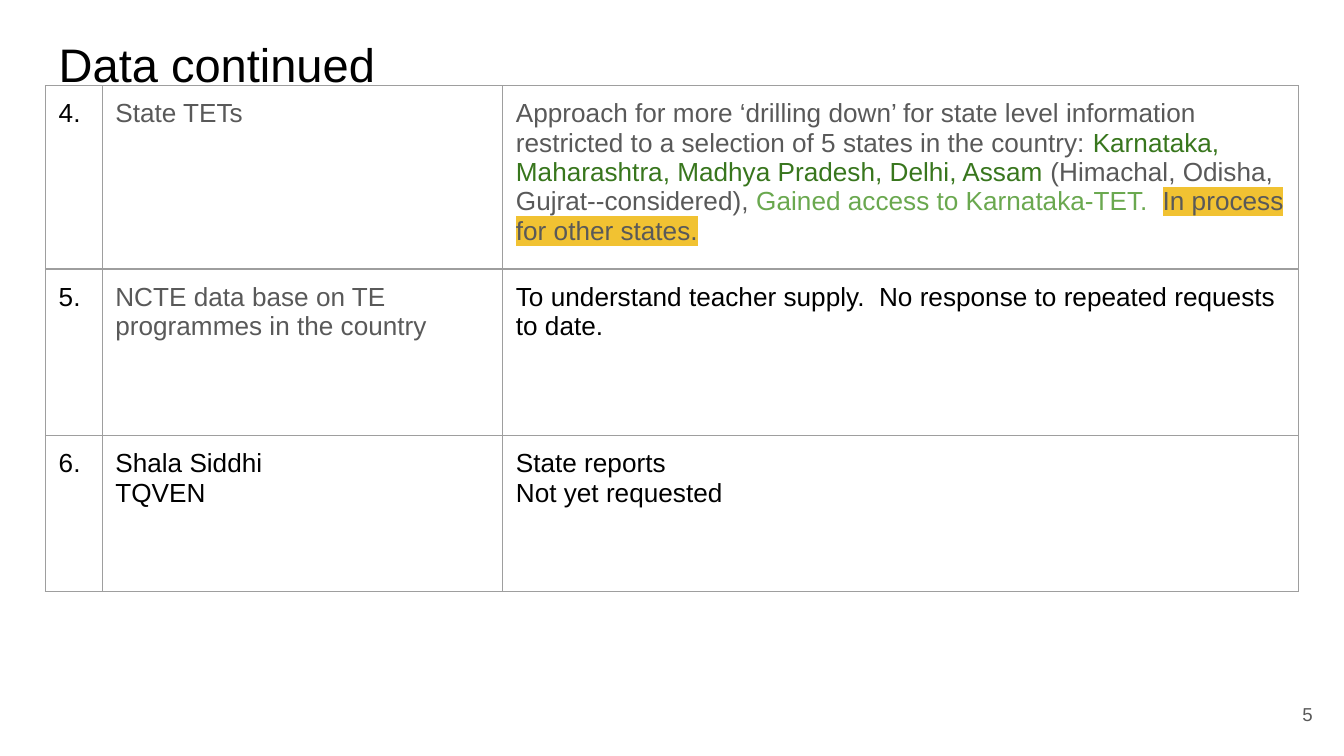
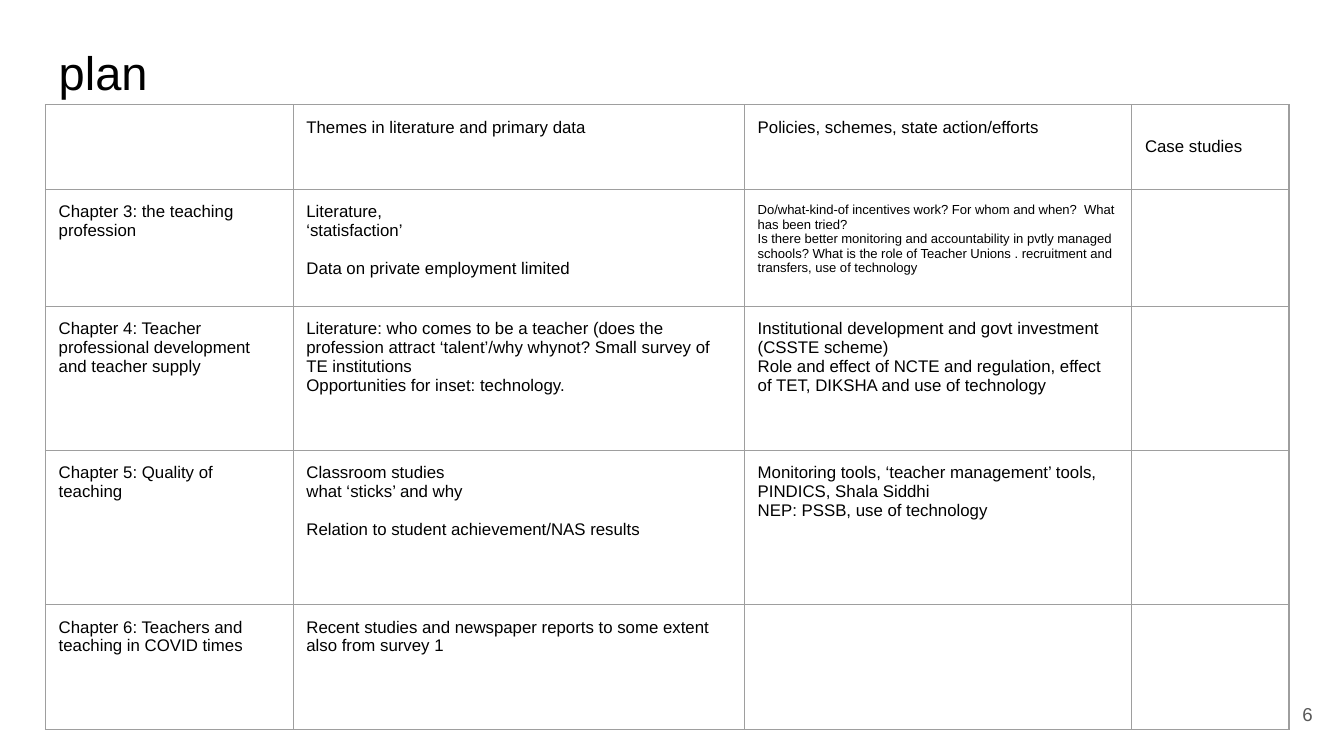
from lxml import etree
from pptx import Presentation
from pptx import util as u
from pptx.dml.color import RGBColor
from pptx.enum import text
from pptx.oxml import ns

FONT = "Arial"
BLACK = RGBColor(0x00, 0x00, 0x00)
GREY = RGBColor(0x59, 0x59, 0x59)
DARK_GREEN = RGBColor(0x38, 0x76, 0x1D)
LIGHT_GREEN = RGBColor(0x6A, 0xA8, 0x4F)
AMBER = RGBColor(0xF1, 0xC2, 0x32)
BORDER = RGBColor(0x9E, 0x9E, 0x9E)

LEFT = u.Cm(0.86)
INSET = u.Cm(0.25)
BLANK_LINE = u.Pt(10.35)

DATA_ROWS = [
    ["4.", "State TETs", ""],
    ["5.", "NCTE data base on TE programmes in the country",
     "To understand teacher supply.  No response to repeated requests to date."],
    ["6.", "Shala Siddhi\nTQVEN", "State reports\nNot yet requested"],
]
STATE_TET_RUNS = [
    ("Approach for more ‘drilling down’ for state level information restricted "
     "to a selection of 5 states in the country: ", GREY),
    ("Karnataka, Maharashtra, Madhya Pradesh, Delhi, Assam", DARK_GREEN),
    (" (Himachal, Odisha, Gujrat--considered), ", GREY),
    ("Gained access to Karnataka-TET.  ", LIGHT_GREEN),
    ("In process for other states.", GREY),
]
PLAN_ROWS = [
    ["", "Themes in literature and primary data",
     "Policies, schemes, state action/efforts", "Case studies"],
    ["Chapter 3: the teaching profession",
     "Literature,\n‘statisfaction’\nData on private employment limited",
     "Do/what-kind-of incentives work? For whom and when?  What has been tried?\n"
     "Is there better monitoring and accountability in pvtly managed schools? "
     "What is the role of Teacher Unions . recruitment and transfers, "
     "use of technology", ""],
    ["Chapter 4: Teacher professional development and teacher supply",
     "Literature: who comes to be a teacher (does the profession attract "
     "‘talent’/why whynot? Small survey of TE institutions\n"
     "Opportunities for inset: technology.",
     "Institutional development and govt investment (CSSTE scheme)\n"
     "Role and effect of NCTE and regulation, effect of TET, DIKSHA and use of "
     "technology", ""],
    ["Chapter 5: Quality of teaching",
     "Classroom studies\nwhat ‘sticks’ and why\n"
     "Relation to student achievement/NAS results",
     "Monitoring tools, ‘teacher management’ tools, PINDICS, Shala Siddhi\n"
     "NEP: PSSB, use of technology", ""],
    ["Chapter 6: Teachers and teaching in COVID times",
     "Recent studies and newspaper reports to some extent also from survey 1",
     "", ""],
]


def format_run(run, size, color):
    run.font.name = FONT
    run.font.size = u.Pt(size)
    run.font.color.rgb = color


def format_text(text_frame, size, color):
    for paragraph in text_frame.paragraphs:
        for run in paragraph.runs:
            format_run(run, size, color)


def highlight(run, color):
    """Mark a run whose colour is already set."""
    mark = etree.Element(ns.qn("a:highlight"))
    etree.SubElement(mark, ns.qn("a:srgbClr"), val=str(color))
    run._r.get_or_add_rPr().find(ns.qn("a:solidFill")).addnext(mark)


def set_end_size(paragraph, size):
    """Size the paragraph mark, so that it does not stretch the table row."""
    etree.SubElement(paragraph._p, ns.qn("a:endParaRPr"), sz=str(size * 100))


def set_insets(frame):
    """Give a text frame or a table cell the common inset on all sides."""
    frame.margin_left = frame.margin_right = INSET
    frame.margin_top = frame.margin_bottom = INSET


def add_text(slide, content, left, top, width, height, size, color):
    text_frame = slide.shapes.add_textbox(left, top, width, height).text_frame
    text_frame.word_wrap = True
    set_insets(text_frame)
    text_frame.text = content
    format_text(text_frame, size, color)
    return text_frame


def add_titled_slide(presentation, title, number, top, height):
    slide = presentation.slides.add_slide(presentation.slide_layouts[6])
    add_text(slide, title, LEFT, top, u.Cm(23.67), height, 25.2, BLACK)
    number_frame = add_text(slide, str(number), u.Cm(23.54), u.Cm(12.95),
                            u.Cm(1.52), u.Cm(1.09), 10, GREY)
    number_frame.vertical_anchor = text.MSO_ANCHOR.MIDDLE
    number_frame.paragraphs[0].alignment = text.PP_ALIGN.RIGHT
    return slide


def add_borders(cell):
    properties = cell._tc.get_or_add_tcPr()
    for index, side in enumerate(("lnL", "lnR", "lnT", "lnB")):
        line = etree.Element(ns.qn("a:" + side), w=str(u.Pt(0.75)))
        fill = etree.SubElement(line, ns.qn("a:solidFill"))
        etree.SubElement(fill, ns.qn("a:srgbClr"), val=str(BORDER))
        properties.insert(index, line)


def add_grid(slide, rows, top, widths, heights, size):
    """Add an unfilled table; widths and heights are in centimetres."""
    table = slide.shapes.add_table(len(rows), len(widths), LEFT, top,
                                   u.Cm(sum(widths)), u.Cm(sum(heights))).table
    table.first_row = table.horz_banding = False
    for column, width in zip(table.columns, widths):
        column.width = u.Cm(width)
    for row, height, contents in zip(table.rows, heights, rows):
        row.height = u.Cm(height)
        for cell, content in zip(row.cells, contents):
            set_insets(cell)
            cell.fill.background()
            add_borders(cell)
            cell.text_frame.text = content
            format_text(cell.text_frame, size, BLACK)
    return table


def add_data_slide(presentation):
    slide = add_titled_slide(presentation, "Data continued", 5, u.Cm(0.43), u.Cm(0.69))
    table = add_grid(slide, DATA_ROWS, u.Cm(1.62), [1.07, 7.57, 15.04],
                     [3.15, 3.15, 2.95], 14)
    for row in (0, 1):
        format_text(table.cell(row, 1).text_frame, 14, GREY)
    paragraph = table.cell(0, 2).text_frame.paragraphs[0]
    for content, color in STATE_TET_RUNS:
        run = paragraph.add_run()
        run.text = content
        format_run(run, 14, color)
    highlight(run, AMBER)
    set_end_size(paragraph, 14)


def add_plan_slide(presentation):
    slide = add_titled_slide(presentation, "plan", 6, u.Cm(0.58), u.Cm(0.89))
    table = add_grid(slide, PLAN_ROWS, u.Cm(1.98), [4.68, 8.53, 7.32, 2.97],
                     [1.6, 2.21, 2.72, 2.92, 2.36], 9)
    table.cell(0, 3).margin_top = INSET + BLANK_LINE
    format_text(table.cell(1, 2).text_frame, 7, BLACK)
    for row in (1, 3):
        table.cell(row, 1).text_frame.paragraphs[2].space_before = BLANK_LINE


def main():
    presentation = Presentation()
    presentation.slide_width = u.Cm(25.4)
    presentation.slide_height = u.Cm(14.29)
    add_data_slide(presentation)
    add_plan_slide(presentation)
    presentation.save("out.pptx")


if __name__ == "__main__":
    main()
